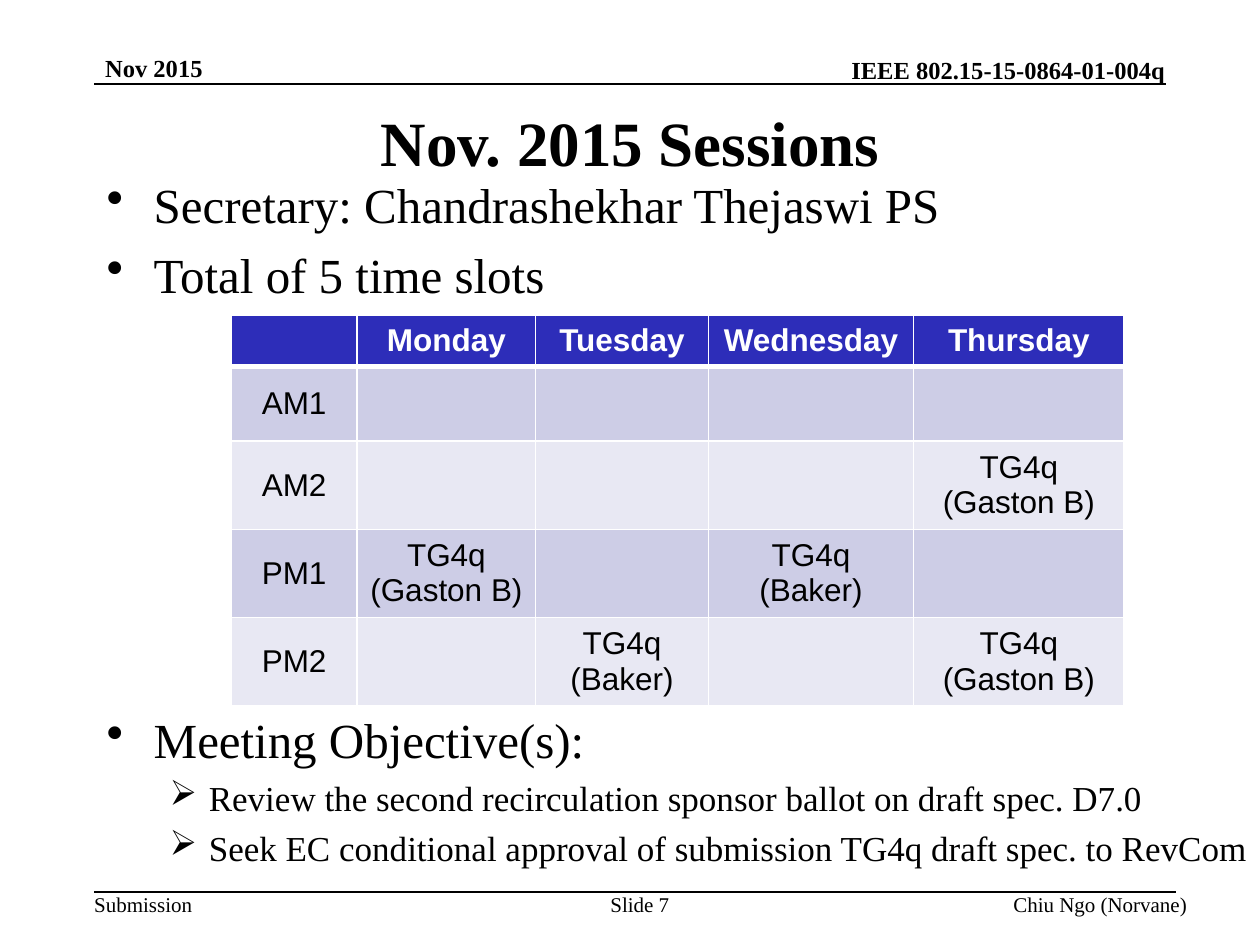
import lxml.etree
import pptx
import pptx.dml.color
import pptx.enum.shapes
import pptx.enum.text
import pptx.oxml.ns
import pptx.util

Cm = pptx.util.Cm
Pt = pptx.util.Pt
Align = pptx.enum.text.PP_ALIGN
Anchor = pptx.enum.text.MSO_ANCHOR
RGBColor = pptx.dml.color.RGBColor
qn = pptx.oxml.ns.qn

BLACK = RGBColor(0x00, 0x00, 0x00)
WHITE = RGBColor(0xFF, 0xFF, 0xFF)
HEADER_BLUE = RGBColor(0x2D, 0x2D, 0xB9)
BANDS = [RGBColor(0xCD, 0xCD, 0xE6), RGBColor(0xE8, 0xE8, 0xF3)]
SERIF = "Times New Roman"
SANS = "Arial"

COLUMN_WIDTHS = [2.54, 3.6, 3.48, 4.14, 4.24]
ROW_HEIGHTS = [1.04, 1.5, 1.5, 1.5, 1.5]
GASTON = "TG4q\n(Gaston B)"
BAKER = "TG4q\n(Baker)"
SCHEDULE = [
    ["", "Monday", "Tuesday", "Wednesday", "Thursday"],
    ["AM1", "", "", "", ""],
    ["AM2", "", "", "", GASTON],
    ["PM1", GASTON, "", BAKER, ""],
    ["PM2", "", BAKER, "", GASTON],
]


def set_font(para, size, name=SERIF, color=BLACK, bold=False):
    para.font.size = Pt(size)
    para.font.name = name
    para.font.color.rgb = color
    para.font.bold = bold


def add_box(slide, left, top, width, height, anchor=Anchor.TOP, inset=True):
    box = slide.shapes.add_textbox(Cm(left), Cm(top), Cm(width), Cm(height))
    frame = box.text_frame
    frame.word_wrap = True
    frame.vertical_anchor = anchor
    if not inset:
        frame.margin_left = frame.margin_right = 0
        frame.margin_top = frame.margin_bottom = 0
    return frame


def add_label(slide, text, place, size, align=Align.LEFT, bold=False,
              anchor=Anchor.TOP):
    frame = add_box(slide, *place, anchor=anchor, inset=False)
    para = frame.paragraphs[0]
    para.text = text
    para.alignment = align
    set_font(para, size, bold=bold)


def add_rule(slide, left, right, top):
    rule = slide.shapes.add_connector(
        pptx.enum.shapes.MSO_CONNECTOR.STRAIGHT,
        Cm(left), Cm(top), Cm(right), Cm(top))
    rule.line.color.rgb = BLACK
    rule.line.width = Pt(1)
    lxml.etree.SubElement(rule.element.spPr, qn("a:effectLst"))


def add_bullets(slide, place, items):
    frame = add_box(slide, *place)
    for index, (level, text) in enumerate(items):
        para = frame.paragraphs[0] if index == 0 else frame.add_paragraph()
        para.text = text
        para.level = level
        size, mark, left, hanging = [(28, "•", 0.95, 0.95),
                                     (20, "➢", 2.06, 0.79)][level]
        para.space_before = Pt(size * 0.23)
        properties = para._p.get_or_add_pPr()
        properties.set("marL", str(Cm(left)))
        properties.set("indent", str(-Cm(hanging)))
        lxml.etree.SubElement(properties, qn("a:buChar"), char=mark)
        set_font(para, size)


def set_borders(cell, widths):
    properties = cell._tc.get_or_add_tcPr()
    for side, width in widths.items():
        line = lxml.etree.SubElement(
            properties, qn("a:ln" + side), w=str(Pt(width)))
        fill = lxml.etree.SubElement(line, qn("a:solidFill"))
        lxml.etree.SubElement(fill, qn("a:srgbClr"), val=str(WHITE))


def fill_cell(cell, text, row):
    header = row == 0
    set_borders(cell, {"L": 1, "R": 1, "T": 3 if row == 1 else 1,
                       "B": 3 if header else 1})
    cell.fill.solid()
    cell.fill.fore_color.rgb = HEADER_BLUE if header else BANDS[(row - 1) % 2]
    cell.vertical_anchor = Anchor.MIDDLE
    cell.text = text
    for para in cell.text_frame.paragraphs:
        para.alignment = Align.CENTER
        set_font(para, 18, SANS, WHITE if header else BLACK, header)


def add_schedule(slide, left, top):
    table = slide.shapes.add_table(
        len(ROW_HEIGHTS), len(COLUMN_WIDTHS), Cm(left), Cm(top),
        Cm(sum(COLUMN_WIDTHS)), Cm(sum(ROW_HEIGHTS))).table
    for column, width in zip(table.columns, COLUMN_WIDTHS):
        column.width = Cm(width)
    for row, height in zip(table.rows, ROW_HEIGHTS):
        row.height = Cm(height)
    for row, texts in enumerate(SCHEDULE):
        for column, text in enumerate(texts):
            fill_cell(table.cell(row, column), text, row)


def add_title(slide, text):
    frame = add_box(slide, 1.9, 1.9, 21.6, 1.9, anchor=Anchor.MIDDLE)
    para = frame.paragraphs[0]
    para.text = text
    para.alignment = Align.CENTER
    set_font(para, 36, bold=True)


def main():
    deck = pptx.Presentation()
    deck.slide_width = Cm(25.4)
    deck.slide_height = Cm(19.05)
    slide = deck.slides.add_slide(deck.slide_layouts[6])

    add_label(slide, "IEEE 802.15-15-0864-01-004q", (11.86, 1.09, 11.63, 0.61),
              14, Align.RIGHT, True, Anchor.BOTTOM)
    add_label(slide, "Nov 2015", (2.12, 1.06, 4.45, 0.61),
              14, bold=True, anchor=Anchor.BOTTOM)
    add_rule(slide, 1.9, 23.5, 1.7)

    add_title(slide, "Nov. 2015 Sessions")
    add_bullets(slide, (1.9, 3.39, 22.65, 1.7), [
        (0, "Secretary: Chandrashekhar Thejaswi PS"),
        (0, "Total of 5 time slots"),
    ])
    add_schedule(slide, 4.66, 6.35)
    add_bullets(slide, (1.9, 14.18, 23.92, 3.6), [
        (0, "Meeting Objective(s):"),
        (1, "Review the second recirculation sponsor ballot on draft spec. D7.0"),
        (1, "Seek EC conditional approval of submission TG4q draft spec. to RevCom"),
    ])

    add_rule(slide, 1.9, 23.7, 17.98)
    add_label(slide, "Submission", (1.9, 17.98, 2.2, 0.51), 12)
    add_label(slide, "Slide 7", (11.9, 17.98, 2, 0.51), 12, Align.CENTER)
    add_label(slide, "Chiu Ngo (Norvane)", (15.24, 17.98, 8.69, 0.51),
              12, Align.RIGHT)
    deck.save("out.pptx")


if __name__ == "__main__":
    main()
